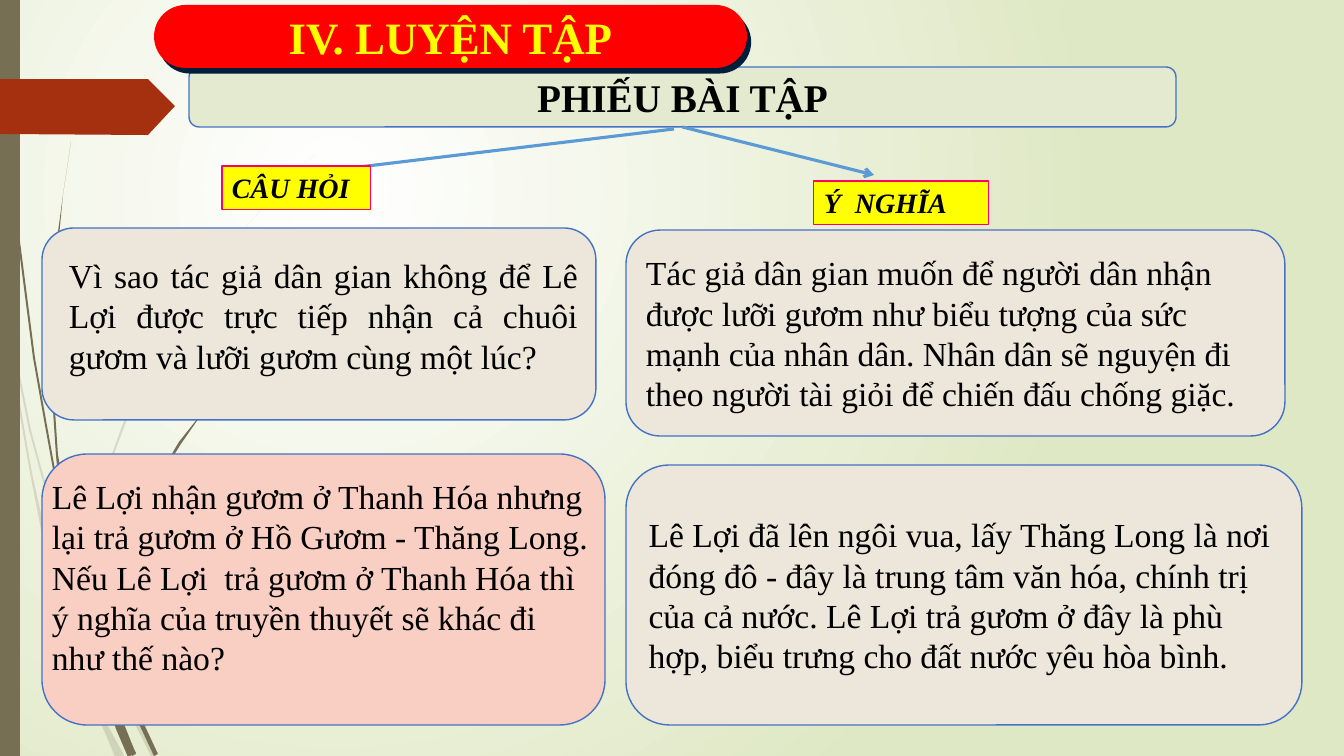
from math import hypot

from lxml.etree import SubElement
from pptx import Presentation
from pptx.dml.color import RGBColor
from pptx.enum.shapes import MSO_CONNECTOR, MSO_SHAPE
from pptx.enum.text import MSO_ANCHOR, PP_ALIGN
from pptx.oxml import parse_xml
from pptx.oxml.ns import nsdecls, qn
from pptx.util import Emu, Pt

PX = 914400 / 100.8
FONT = "Times New Roman"
OLIVE, BLUE, SAND, YELLOW = "766F54", "4472C4", "EDE6DB", "FFFF00"

FAINT_WISPS = [
    [(0, 292, 4), (10, 346, 2), (18, 398, 3), (31, 473, 3), (47, 550, 4),
     (67, 625, 5), (93, 693, 4), (102, 720, 5), (120, 757, 8)],
    [(14, 348, 0), (17, 365, 2), (30, 430, 3), (43, 478, 3), (60, 525, 4),
     (74, 564, 3), (87, 602, 2), (125, 699, 4), (154, 757, 5)],
    [(315, 154, 0), (291, 176, 1), (270, 199, 1), (230, 246, 1), (192, 298, 2),
     (160, 352, 2), (130, 408, 3), (109, 465, 3), (93, 525, 3), (87, 589, 3), (87, 601, 1)],
]
DARK_WISPS = [
    [(3, 0, 1), (4, 48, 1), (7, 110, 1), (18, 234, 2), (34, 358, 3), (45, 420, 3),
     (55, 475, 2), (57, 485, 0)],
    [(57, 481, 0), (63, 522, 3), (70, 561, 4), (81, 613, 5), (96, 663, 5),
     (111, 704, 5), (119, 728, 6), (132, 755, 8)],
    [(71, 142, 0), (63, 195, 1), (57, 247, 2), (53, 352, 2), (54, 410, 3),
     (57, 455, 3), (60, 476, 4), (64, 509, 0)],
    [(262, 347, 0), (233, 377, 1), (206, 408, 1), (180, 443, 2), (158, 479, 2),
     (139, 517, 3), (125, 556, 3), (114, 596, 4), (109, 637, 4), (113, 657, 3),
     (135, 710, 4), (156, 755, 5)],
    [(107, 650, 0), (110, 680, 4), (118, 715, 5), (134, 755, 5)],
]


def px(length):
    """Turn a length in px into EMU."""
    return Emu(round(length * PX))


def color(hex_code):
    """Turn a hex string into a colour."""
    return RGBColor.from_string(hex_code)


def paint(shape, fill, line=None, width=1):
    """Give a shape its fill and outline, without shadow."""
    shape.shadow.inherit = False
    shape.fill.solid()
    shape.fill.fore_color.rgb = color(fill)
    if line:
        shape.line.color.rgb = color(line)
        shape.line.width = Pt(width)
    else:
        shape.line.fill.background()


def write(shape, text, size=24, ink="000000", bold=False, italic=False,
          align=PP_ALIGN.LEFT, anchor=MSO_ANCHOR.MIDDLE):
    """Write one paragraph into a shape."""
    frame = shape.text_frame
    frame.word_wrap = True
    frame.vertical_anchor = anchor
    paragraph = frame.paragraphs[0]
    paragraph.alignment = align
    run = paragraph.add_run()
    run.text = text
    font = run.font
    font.name, font.size, font.bold, font.italic = FONT, Pt(size), bold, italic
    font.color.rgb = color(ink)


def add_panel(slide, box, fill, line=None, width=1, kind=MSO_SHAPE.ROUNDED_RECTANGLE):
    """Add a filled preset shape at a px box."""
    panel = slide.shapes.add_shape(kind, *map(px, box))
    paint(panel, fill, line, width)
    return panel


def add_outline(slide, points, fill):
    """Add a closed polygon through px points."""
    builder = slide.shapes.build_freeform(*points[0], scale=PX)
    builder.add_line_segments(points[1:], close=True)
    outline = builder.convert_to_shape()
    paint(outline, fill)
    return outline


def add_wisp(slide, spine, opacity=100):
    """Add a grass blade whose width varies along its spine."""
    left, right = [], []
    for i, (x, y, width) in enumerate(spine):
        before, after = spine[max(i - 1, 0)], spine[min(i + 1, len(spine) - 1)]
        dx, dy = after[0] - before[0], after[1] - before[1]
        reach = width / 2 / hypot(dx, dy)
        left.append((x - dy * reach, y + dx * reach))
        right.append((x + dy * reach, y - dx * reach))
    blade = add_outline(slide, left + right[::-1], OLIVE)
    if opacity < 100:
        tone = blade.fill._xPr.find(qn("a:solidFill"))[0]
        SubElement(tone, qn("a:alpha"), val=str(opacity * 1000))


def add_arrow(slide, start, end, source=None):
    """Add an arrow, joined to the bottom of its source if given."""
    arrow = slide.shapes.add_connector(MSO_CONNECTOR.STRAIGHT, *map(px, start + end))
    if source:
        arrow.begin_connect(source, 2)
    arrow.line.color.rgb = color("5B9BD5")
    arrow.line.width = Pt(2.25)
    SubElement(arrow.line._get_or_add_ln(), qn("a:tailEnd"), type="arrow")
    SubElement(arrow._element.spPr, qn("a:effectLst"))


def add_label(slide, box, text):
    """Add a yellow column label."""
    label = add_panel(slide, box, YELLOW, "FF0066", 0.75, MSO_SHAPE.RECTANGLE)
    write(label, text, 20, bold=True, italic=True, anchor=MSO_ANCHOR.TOP)


def add_question(slide, box, text, align=PP_ALIGN.LEFT):
    """Add the text of a question over its panel."""
    question = slide.shapes.add_textbox(*map(px, box))
    write(question, text, align=align, anchor=MSO_ANCHOR.TOP)


def add_banner(slide, box, text):
    """Add the red section banner with its hard shadow."""
    banner = add_panel(slide, box, "FF0000")
    banner.adjustments[0] = 0.5
    write(banner, text, 32, YELLOW, bold=True, align=PP_ALIGN.CENTER)
    banner._element.spPr.find(qn("a:effectLst")).append(parse_xml(
        f'<a:outerShdw {nsdecls("a")} dist="63500" dir="3180000" algn="ctr" rotWithShape="0">'
        '<a:srgbClr val="001D3A"/></a:outerShdw>'))


def set_backdrop(slide):
    """Fill the background with a round white to green gradient."""
    fill = slide.background.fill
    fill.gradient()
    for stop, position, tone in zip(fill.gradient_stops, (0, 1), ("FFFFFF", "DFE8C4")):
        stop.position = position
        stop.color.rgb = color(tone)
    gradient = fill._xPr.find(qn("a:gradFill"))
    gradient.replace(gradient.find(qn("a:lin")), parse_xml(
        f'<a:path {nsdecls("a")} path="circle">'
        '<a:fillToRect l="50000" t="50000" r="100000" b="100000"/></a:path>'))


def main():
    """Build the exercise slide."""
    deck = Presentation()
    deck.slide_width, deck.slide_height = px(1344), px(756)
    slide = deck.slides.add_slide(deck.slide_layouts[6])
    set_backdrop(slide)
    for spine in FAINT_WISPS:
        add_wisp(slide, spine, 20)
    for spine in DARK_WISPS:
        add_wisp(slide, spine)
    add_panel(slide, (0, 0, 20, 756), OLIVE, kind=MSO_SHAPE.RECTANGLE)
    add_outline(slide, [(0, 79), (148, 79), (175, 106), (148, 135), (0, 134)], "A53010")

    worksheet = add_panel(slide, (189, 67, 987, 60), "E3EACF", BLUE)
    write(worksheet, "PHIẾU BÀI TẬP", 28, bold=True, align=PP_ALIGN.CENTER)
    add_arrow(slide, (682, 127), (874, 175), worksheet)
    add_arrow(slide, (674, 129), (293, 175))
    add_label(slide, (222, 166, 149, 44), "CÂU HỎI")
    add_label(slide, (814, 181, 175, 44), "Ý  NGHĨA")

    add_panel(slide, (42, 228, 554, 192), SAND, BLUE)
    add_panel(slide, (42, 454, 563, 271), "F9CFC3", BLUE)
    add_question(slide, (59, 250, 529, 132),
                 "Vì sao tác giả dân gian không để Lê Lợi được trực tiếp nhận cả chuôi "
                 "gươm và lưỡi gươm cùng một lúc?", PP_ALIGN.JUSTIFY)
    add_question(slide, (42, 471, 563, 254),
                 "Lê Lợi nhận gươm ở Thanh Hóa nhưng lại trả gươm ở Hồ Gươm - Thăng Long. "
                 "Nếu Lê Lợi  trả gươm ở Thanh Hóa thì ý nghĩa của truyền thuyết sẽ khác đi "
                 "như thế nào?")
    add_banner(slide, (154, 5, 593, 63), "IV. LUYỆN TẬP")
    write(add_panel(slide, (626, 230, 659, 206), SAND, BLUE),
          "Tác giả dân gian muốn để người dân nhận được lưỡi gươm như biểu tượng của sức "
          "mạnh của nhân dân. Nhân dân sẽ nguyện đi theo người tài giỏi để chiến đấu "
          "chống giặc.")
    write(add_panel(slide, (626, 465, 676, 260), SAND, BLUE),
          "Lê Lợi đã lên ngôi vua, lấy Thăng Long là nơi đóng đô - đây là trung tâm văn "
          "hóa, chính trị của cả nước. Lê Lợi trả gươm ở đây là phù hợp, biểu trưng cho "
          "đất nước yêu hòa bình.")
    deck.save("out.pptx")


if __name__ == "__main__":
    main()
